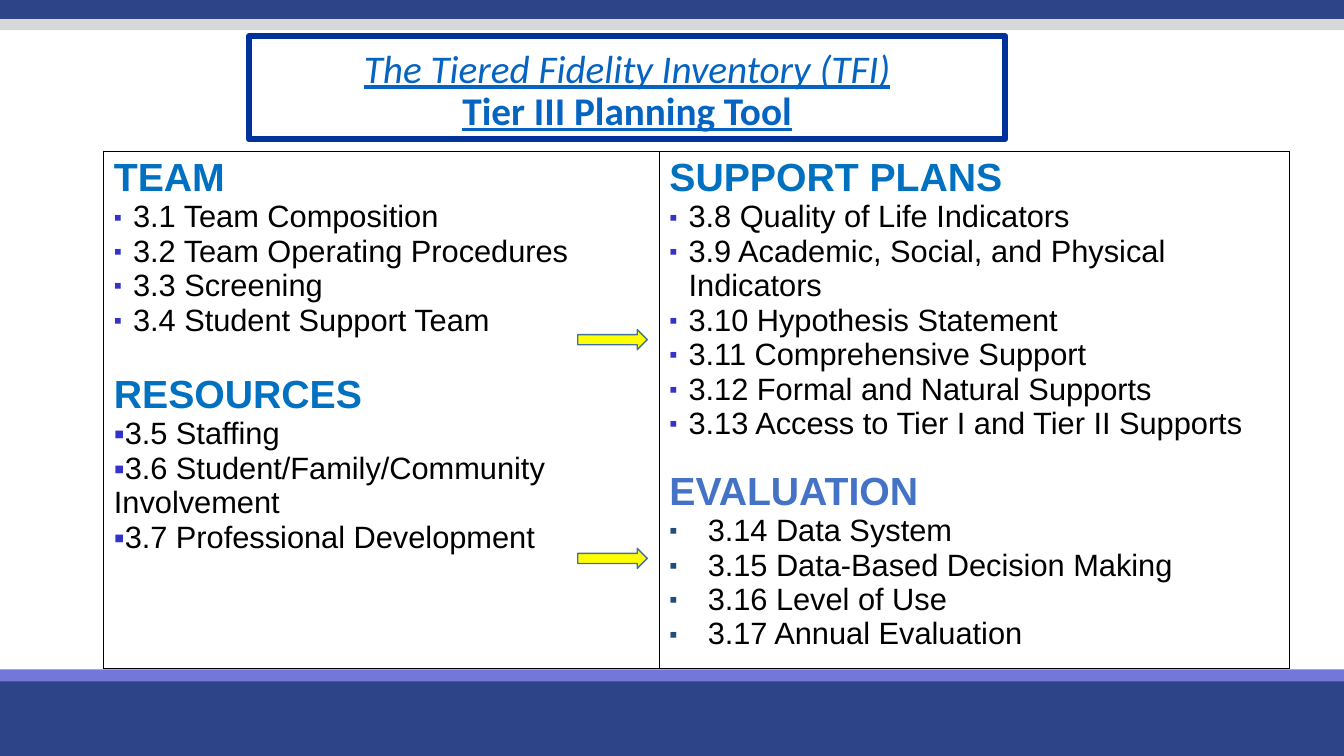
from dataclasses import dataclass

from lxml import etree
from pptx import Presentation
from pptx.dml.color import RGBColor
from pptx.enum.shapes import MSO_SHAPE
from pptx.enum.text import MSO_ANCHOR, PP_ALIGN
from pptx.oxml.ns import qn
from pptx.util import Inches, Pt

RECTANGLE, RIGHT_ARROW = MSO_SHAPE.RECTANGLE, MSO_SHAPE.RIGHT_ARROW
BOTTOM, CENTER = MSO_ANCHOR.BOTTOM, PP_ALIGN.CENTER
NAVY, BLUE, INDIGO = "2E4488", "0070C0", "3333CC"


@dataclass
class Block:
    left: float
    top: float
    width: float
    height: float
    fill: str
    kind: int = RECTANGLE
    line: str = ""
    line_width: float = 1


@dataclass
class Bullet:
    color: str
    margin: float
    indent: float
    percent: int


@dataclass
class Section:
    heading: str
    items: list[str]
    bullet: Bullet
    color: str = BLUE
    gap: float = 0


HANGING = Bullet(INDIGO, 0.19, -0.19, 75)
FLUSH = Bullet(INDIGO, 0, -0.15, 100)
WIDE = Bullet("1F4E79", 0.38, -0.38, 75)

BANDS = [
    Block(0, 0, 13.33, 0.19, NAVY),
    Block(0, 0.19, 13.33, 0.11, "D8D8D8"),
    Block(0, 6.7, 13.33, 0.8, NAVY),
    Block(0, 6.64, 13.33, 0.12, "7476DA"),
]
ARROWS = [Block(5.73, top, 0.69, 0.2, "FFFF00", RIGHT_ARROW, "42719B")
          for top in (3.27, 5.44)]
TITLE = Block(2.47, 0.36, 7.5, 1.02, "FFFFFF", line="003399", line_width=4.5)

COLUMN_WIDTHS = [5.51, 6.25]
COLUMNS = [
    [
        Section("TEAM", [
            "3.1 Team Composition",
            "3.2 Team Operating Procedures",
            "3.3 Screening",
            "3.4 Student Support Team",
        ], HANGING),
        Section("RESOURCES", [
            "3.5 Staffing",
            "3.6 Student/Family/Community Involvement",
            "3.7 Professional Development",
        ], FLUSH, gap=25.3),
    ],
    [
        Section("SUPPORT PLANS", [
            "3.8 Quality of Life Indicators",
            "3.9 Academic, Social, and Physical Indicators",
            "3.10 Hypothesis Statement",
            "3.11 Comprehensive Support",
            "3.12 Formal and Natural Supports",
            "3.13 Access to Tier I and Tier II Supports",
        ], HANGING),
        Section("EVALUATION", [
            "3.14 Data System",
            "3.15 Data-Based Decision Making",
            "3.16 Level of Use",
            "3.17 Annual Evaluation",
        ], WIDE, "4472C4", 20.7),
    ],
]


def rgb(value: str) -> RGBColor:
    return RGBColor.from_string(value)


def add_block(page, block: Block):
    shape = page.shapes.add_shape(
        block.kind, Inches(block.left), Inches(block.top),
        Inches(block.width), Inches(block.height))
    shape.shadow.inherit = False
    shape.fill.solid()
    shape.fill.fore_color.rgb = rgb(block.fill)
    if block.line:
        shape.line.color.rgb = rgb(block.line)
        shape.line.width = Pt(block.line_width)
    else:
        shape.line.fill.background()
    return shape


def add_span(para, text: str, color: str, **formats) -> None:
    span = para.add_run()
    span.text = text
    span.font.color.rgb = rgb(color)
    for name, value in formats.items():
        setattr(span.font, name, value)


def set_bullet(para, bullet: Bullet) -> None:
    props = para._p.get_or_add_pPr()
    props.set("marL", str(Inches(bullet.margin)))
    props.set("indent", str(Inches(bullet.indent)))
    color = etree.SubElement(props, qn("a:buClr"))
    etree.SubElement(color, qn("a:srgbClr"), val=bullet.color)
    etree.SubElement(props, qn("a:buSzPct"), val=str(bullet.percent * 1000))
    etree.SubElement(props, qn("a:buFont"), typeface="Arial")
    etree.SubElement(props, qn("a:buChar"), char="▪")


def set_borders(cell) -> None:
    props = cell._tc.get_or_add_tcPr()
    for side in ("lnL", "lnR", "lnT", "lnB"):
        line = etree.SubElement(props, qn(f"a:{side}"), w=str(Pt(1)))
        fill = etree.SubElement(line, qn("a:solidFill"))
        etree.SubElement(fill, qn("a:srgbClr"), val="000000")


def fill_cell(cell, sections: list[Section]) -> None:
    set_borders(cell)
    cell.fill.background()
    frame = cell.text_frame
    for number, section in enumerate(sections):
        para = frame.add_paragraph() if number else frame.paragraphs[0]
        if section.gap:
            para.space_before = Pt(section.gap)
        add_span(para, section.heading, section.color,
                 name="Arial", size=Pt(28), bold=True)
        for item in section.items:
            para = frame.add_paragraph()
            set_bullet(para, section.bullet)
            add_span(para, item, "000000", name="Arial", size=Pt(22), bold=False)


def add_inventory(page) -> None:
    table = page.shapes.add_table(
        1, len(COLUMNS), Inches(1.03), Inches(1.5),
        Inches(sum(COLUMN_WIDTHS)), Inches(5.13)).table
    table.first_row = table.horz_banding = False
    for index, (width, sections) in enumerate(zip(COLUMN_WIDTHS, COLUMNS)):
        table.columns[index].width = Inches(width)
        fill_cell(table.cell(0, index), sections)


def add_title(page) -> None:
    frame = add_block(page, TITLE).text_frame
    frame.word_wrap = True
    frame.vertical_anchor = BOTTOM
    para = frame.paragraphs[0]
    para.alignment = CENTER
    para.line_spacing = 0.9
    formats = {"name": "Calibri", "size": Pt(28), "underline": True}
    add_span(para, "The Tiered Fidelity Inventory (TFI)", "0563C1",
             italic=True, **formats)
    para.add_line_break()
    add_span(para, "Tier III Planning Tool", "0563C1", bold=True, **formats)


def main() -> None:
    deck = Presentation()
    deck.slide_width, deck.slide_height = Inches(13.33), Inches(7.5)
    page = deck.slides.add_slide(deck.slide_layouts[6])

    # Bands at the top and bottom
    for band in BANDS:
        add_block(page, band)

    # Inventory items, with arrows pointing to the right column
    add_inventory(page)
    for arrow in ARROWS:
        add_block(page, arrow)

    # Title box
    add_title(page)
    deck.save("out.pptx")


if __name__ == "__main__":
    main()
